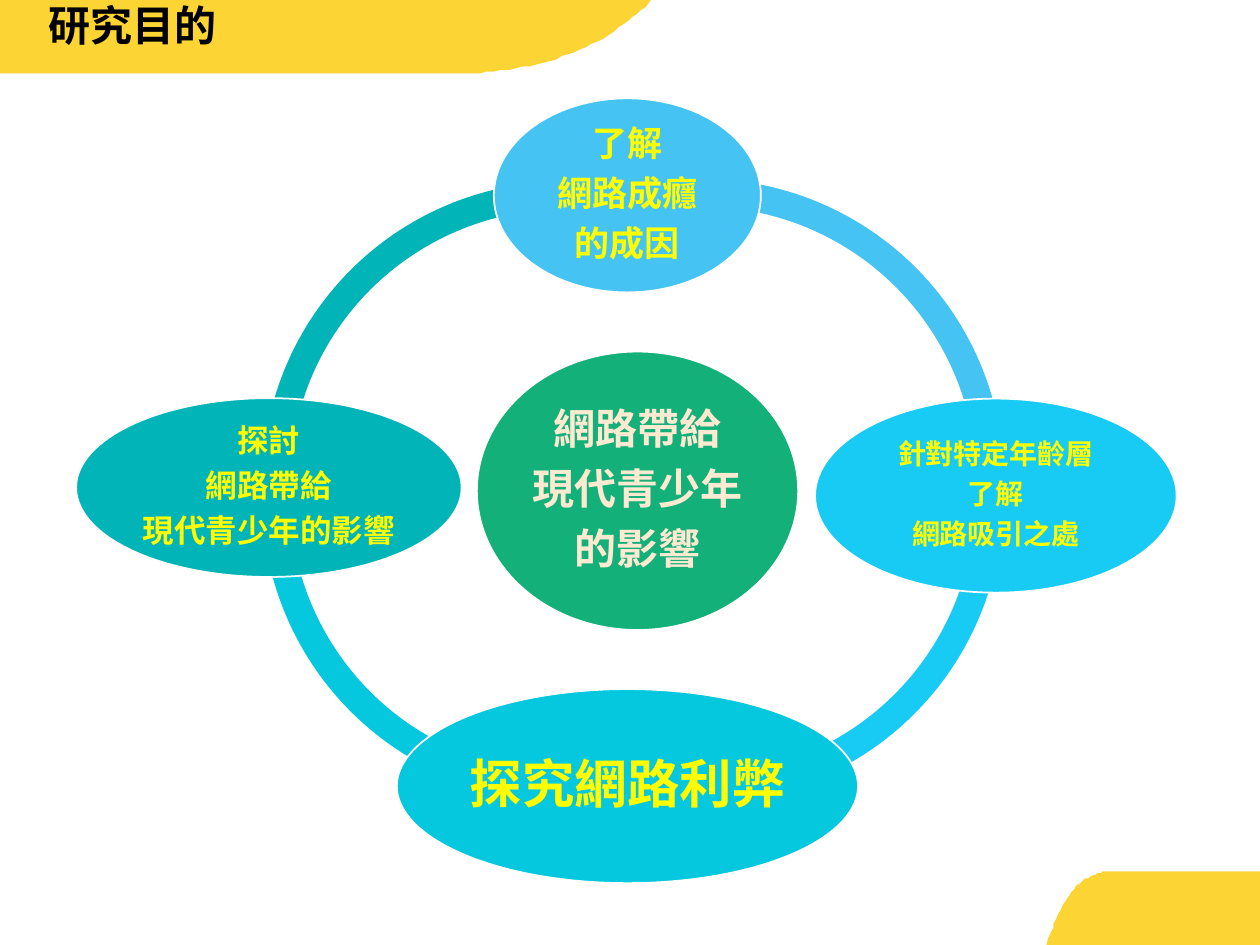
from lxml.etree import SubElement
from pptx import Presentation
from pptx.dml.color import RGBColor
from pptx.enum.shapes import MSO_SHAPE
from pptx.enum.text import MSO_ANCHOR, PP_ALIGN
from pptx.oxml.ns import qn
from pptx.util import Pt

FONT = "Noto Sans CJK SC"
TEAL, CYAN, BRIGHT, SKY = "00B4B8", "05C7DD", "18CBF4", "45C3F2"
YELLOW = "FFFF00"


def color(hex_code):
    return RGBColor.from_string(hex_code)


def write(frame, lines, size, hex_code, align):
    """Fill a text frame with bold lines, one paragraph each."""
    frame.word_wrap = True
    for index, line in enumerate(lines):
        paragraph = frame.add_paragraph() if index else frame.paragraphs[0]
        paragraph.alignment = align
        paragraph.line_spacing = 0.9
        run = paragraph.add_run()
        run.text = line
        formats = {"name": FONT, "size": Pt(size), "bold": True}
        for attribute, value in formats.items():
            setattr(run.font, attribute, value)
        run.font.color.rgb = color(hex_code)
        SubElement(run.font._element, qn("a:ea"), typeface=FONT)


presentation = Presentation()
presentation.slide_width, presentation.slide_height = Pt(720), Pt(540)
slide = presentation.slides.add_slide(presentation.slide_layouts[6])
shapes = slide.shapes

# Yellow corners: start point, then cubic curves (two controls and an end) or line ends
corners = [
    [(0, 0), [(372.24, 0)], [(368.64, 3.6)],
     [(356.4, 15.84), (340.56, 25.92), (321.12, 32.4)],
     [(302.4, 38.88), (280.08, 42.48), (255.6, 42.48)],
     [(3.6, 42.48)], [(0, 41.76)]],
    [(720, 540), [(597.6, 540)], [(599.04, 536.4)],
     [(603.36, 524.16), (608.4, 514.08), (614.16, 507.6)],
     [(620.64, 501.12), (627.84, 497.52), (636.48, 497.52)],
     [(720, 497.52)]],
]
STEPS = 16
for start, *segments in corners:
    outline = [start]
    for segment in segments:
        if len(segment) == 1:
            outline += segment
            continue
        curve = [outline[-1], *segment]
        for step in range(1, STEPS + 1):
            t = step / STEPS
            weights = ((1 - t) ** 3, 3 * t * (1 - t) ** 2, 3 * t * t * (1 - t), t ** 3)
            outline.append(tuple(sum(w * point[axis] for w, point in zip(weights, curve))
                                 for axis in (0, 1)))
    builder = shapes.build_freeform(*outline[0], scale=Pt(1))
    builder.add_line_segments(outline[1:], close=True)
    corner = builder.convert_to_shape()
    corner.shadow.inherit = False
    corner.fill.solid()
    corner.fill.fore_color.rgb = color("FCCB03")
    corner.line.fill.background()
    fill_color = corner._element.spPr.find(qn("a:solidFill"))[0]
    SubElement(fill_color, qn("a:alpha"), val="80000")

heading = shapes.add_textbox(Pt(20.9), Pt(2.9), Pt(182.9), Pt(36.7)).text_frame
heading.margin_top = heading.margin_bottom = 0
write(heading, ["研究目的"], 24, "000000", PP_ALIGN.LEFT)

# Ring segments: left, top, start, end, colour
RING = 345.6
for left, top, start, end, hue in [
    (149.8, 103.7, 107.62, 169.4, TEAL),
    (149.8, 111.6, 46.58, 109.21, CYAN),
    (227.5, 113, 215.53, 62.66, BRIGHT),
    (228.2, 102.2, 153.3, 1.71, SKY),
]:
    arc = shapes.add_shape(MSO_SHAPE.BLOCK_ARC, Pt(left), Pt(top), Pt(RING), Pt(RING))
    arc.shadow.inherit = False
    for index, value in enumerate((start, end, 0.046)):
        arc.adjustments[index] = value
    arc.fill.solid()
    arc.fill.fore_color.rgb = color(hue)
    arc.line.fill.background()

# Topics: box, fill, text size, text colour, inset, lines
for box, hue, size, text_hue, inset, lines in [
    ((272.5, 200.9, 183.6, 159.1), "13B07A", 24, "FEE9D1", 2.2,
     ["網路帶給", "現代青少年", "的影響"]),
    ((282.2, 56.2, 152.6, 110.9), SKY, 20, YELLOW, 2.2,
     ["了解", "網路成癮", "的成因"]),
    ((465.8, 227.8, 206.6, 110.9), BRIGHT, 16, YELLOW, 1.4,
     ["針對特定年齡層", "了解", "網路吸引之處"]),
    ((226.8, 393.8, 263.5, 110.9), CYAN, 30, YELLOW, 2.9,
     ["探究網路利弊"]),
    ((43.5, 227.5, 220.3, 102.2), TEAL, 18, YELLOW, 2.2,
     ["探討", "網路帶給", "現代青少年的影響"]),
]:
    topic = shapes.add_shape(MSO_SHAPE.OVAL, *map(Pt, box))
    topic.shadow.inherit = False
    topic.fill.solid()
    topic.fill.fore_color.rgb = color(hue)
    topic.line.color.rgb = color("FFFFFF")
    topic.line.width = Pt(1)
    frame = topic.text_frame
    frame.vertical_anchor = MSO_ANCHOR.MIDDLE
    for side in ("left", "top", "right", "bottom"):
        setattr(frame, f"margin_{side}", Pt(inset))
    write(frame, lines, size, text_hue, PP_ALIGN.CENTER)
    for paragraph in frame.paragraphs:
        space_after = SubElement(paragraph._p.get_or_add_pPr(), qn("a:spcAft"))
        SubElement(space_after, qn("a:spcPct"), val="35000")

presentation.save("out.pptx")
